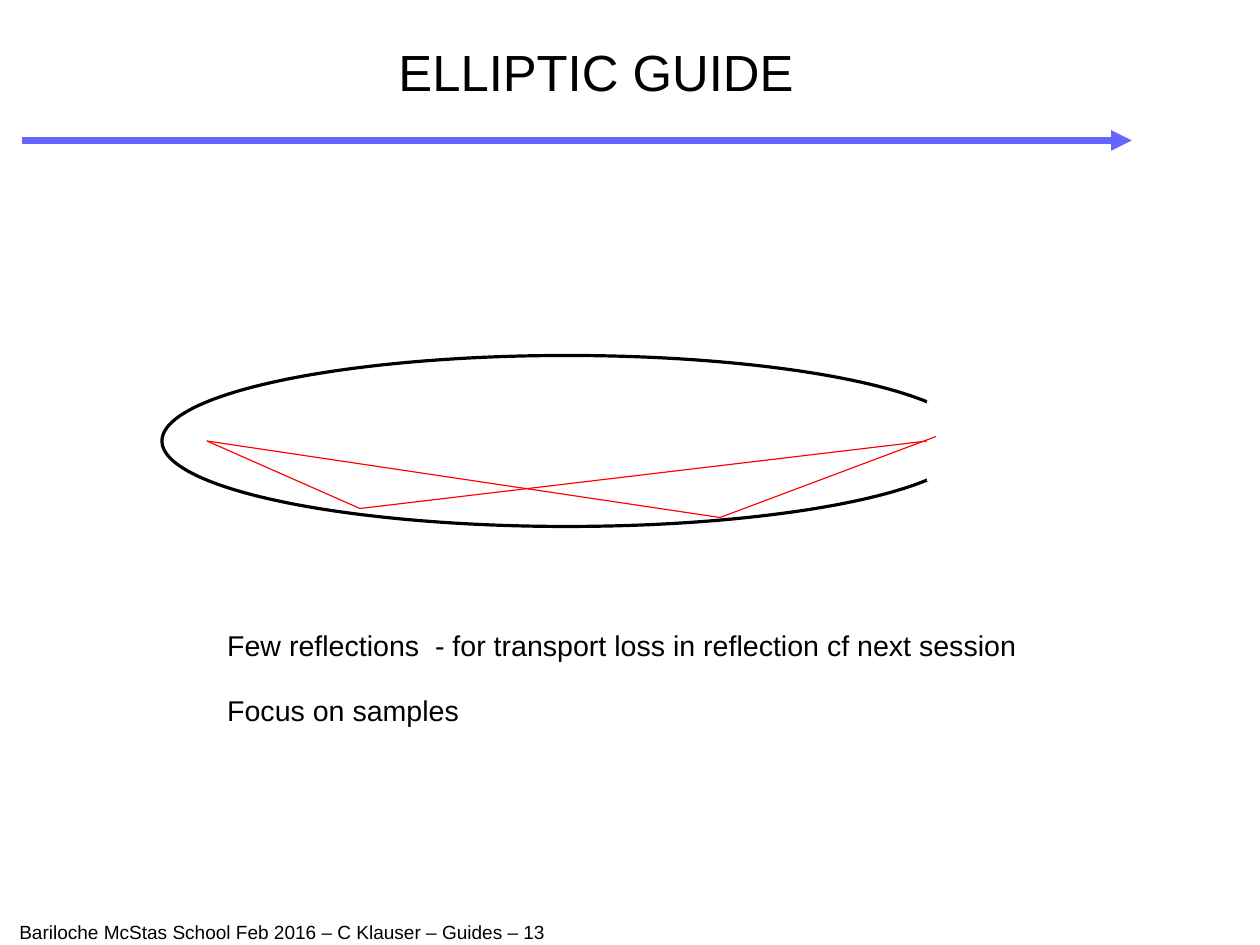
from itertools import pairwise

from lxml.etree import SubElement
from pptx import Presentation
from pptx.dml.color import RGBColor
from pptx.enum.shapes import MSO_CONNECTOR as Link, MSO_SHAPE as Shape
from pptx.enum.text import MSO_ANCHOR as Anchor, MSO_AUTO_SIZE as Fit, PP_ALIGN as Align
from pptx.oxml.ns import qn
from pptx.util import Cm, Pt

BLACK = RGBColor(0x00, 0x00, 0x00)
WHITE = RGBColor(0xFF, 0xFF, 0xFF)
BLUE = RGBColor(0x66, 0x66, 0xFF)
RED = RGBColor(0xFF, 0x00, 0x00)
FONT = "Arial"


def write(box, lines, size, gap=0, spacing=1.0, fit=Fit.NONE):
    """Fill a box with formatted paragraphs, gap points apart."""
    frame = box.text_frame
    frame.text = "\n".join(lines)
    frame.word_wrap = True
    frame.auto_size = fit
    frame.vertical_anchor = Anchor.TOP
    for i, para in enumerate(frame.paragraphs):
        para.alignment = Align.LEFT
        para.line_spacing = spacing
        para.space_before = Pt(gap if i else 0)
        font = para.font
        font.name, font.size, font.color.rgb = FONT, Pt(size), BLACK


def draw(slide, start, end, color, width, arrow=False):
    """Draw a straight line between two points in centimetres."""
    ends = [Cm(n) for n in (*start, *end)]
    line = slide.shapes.add_connector(Link.STRAIGHT, *ends)
    line.line.color.rgb = color
    line.line.width = Pt(width)
    if arrow:
        SubElement(line.line._get_or_add_ln(), qn("a:tailEnd"), type="triangle")
    SubElement(line._element.spPr, qn("a:effectLst"))


def head(slide, left, top, width, height):
    """Place the title and the arrow below it."""
    title = slide.shapes.title
    title.left, title.top = Cm(left + 8.1), Cm(top)
    title.width, title.height = Cm(9.4), Cm(1.55)
    write(title, ["ELLIPTIC GUIDE"], 32, spacing=0.93)
    base = top + height
    draw(slide, (left, base), (left + width, base), BLUE, 4.31, arrow=True)


def guide(slide, left, top, width, height):
    """Draw the open ellipse and the two reflected rays."""
    wall = slide.shapes.add_shape(
        Shape.OVAL, Cm(left), Cm(top), Cm(width), Cm(height))
    wall.fill.background()
    wall.line.color.rgb = BLACK
    wall.line.width = Pt(2)
    exit_ = slide.shapes.add_shape(
        Shape.RECTANGLE, Cm(left + 17), Cm(top + 1), Cm(1.2), Cm(1.8))
    exit_.fill.solid()
    exit_.fill.fore_color.rgb = WHITE
    exit_.line.fill.background()
    for part in (wall, exit_):
        part.shadow.inherit = False

    focus = (1, height / 2)
    rays = [
        [focus, (4.4, 3.4), (17, height / 2)],
        [focus, (12.4, 3.6), (17.2, 1.8)],
    ]
    for ray in rays:
        spots = [(left + x, top + y) for x, y in ray]
        for start, end in pairwise(spots):
            draw(slide, start, end, RED, 0.75)


def note(slide, lines, left, top, width, height, **style):
    """Place a text box with its lines."""
    box = slide.shapes.add_textbox(Cm(left), Cm(top), Cm(width), Cm(height))
    write(box, lines, **style)


def main():
    """Build and save the slide."""
    deck = Presentation()
    deck.slide_width, deck.slide_height = Cm(28), Cm(21)
    slide = deck.slides.add_slide(deck.slide_layouts[5])
    note(slide, ["Bariloche McStas School Feb 2016 – C Klauser – Guides – 13"],
         0.18, 20.32, 20.32, 0.68, size=12)
    head(slide, 0.5, 0.9, 24.65, 2.22)
    guide(slide, 3.6, 7.9, 18, 3.8)
    lines = ["Few reflections  - for transport loss in reflection cf next session",
             "Focus on samples"]
    note(slide, lines, 4.8, 13.9, 18.4, 2.4,
         size=18, gap=21, spacing=0.93, fit=Fit.SHAPE_TO_FIT_TEXT)
    deck.save("out.pptx")


if __name__ == "__main__":
    main()
